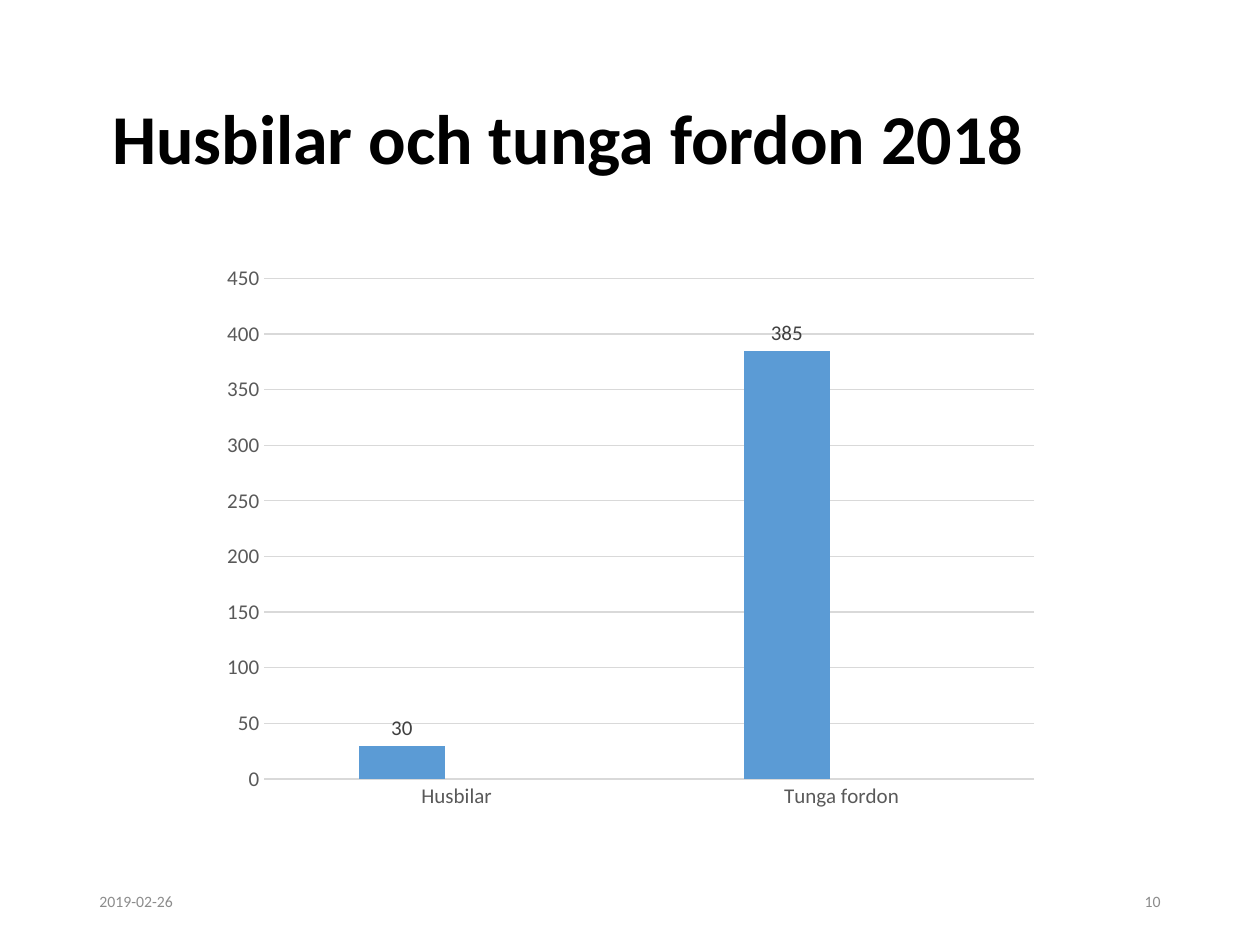
import pptx
import pptx.chart.data
import pptx.dml.color
import pptx.enum.chart
import pptx.enum.text
import pptx.util

Inches, Pt = pptx.util.Inches, pptx.util.Pt
RGBColor = pptx.dml.color.RGBColor
Align = pptx.enum.text.PP_ALIGN
TickMark = pptx.enum.chart.XL_TICK_MARK

BLACK = RGBColor(0x00, 0x00, 0x00)
FOOTER_GRAY = RGBColor(0x8C, 0x8C, 0x8C)
AXIS_GRAY = RGBColor(0x59, 0x59, 0x59)
LABEL_GRAY = RGBColor(0x40, 0x40, 0x40)
GRID_GRAY = RGBColor(0xD9, 0xD9, 0xD9)
BLUE = RGBColor(0x5B, 0x9B, 0xD5)
ORANGE = RGBColor(0xED, 0x7D, 0x31)

TITLE = "Husbilar och tunga fordon 2018"
DATE = "2019-02-26"
PAGE_NUMBER = "10"
CATEGORIES = ["Husbilar", "Tunga fordon"]
SERIES = [("Series 1", [30, 385], BLUE), ("Series 2", [None, None], ORANGE)]

SLIDE_WIDTH, MARGIN = 10, 0.69
FOOTER_TOP, FOOTER_WIDTH, FOOTER_HEIGHT = 6.95, 2.25, 0.4


def style_font(font, size, color, bold=False):
    font.name = "Calibri"
    font.size = Pt(size)
    font.bold = bold
    font.color.rgb = color


def style_line(line):
    line.color.rgb = GRID_GRAY
    line.width = Pt(0.75)


def add_text(page, text, place, size, color, bold=False, align=Align.LEFT):
    box = page.shapes.add_textbox(*map(Inches, place))
    frame = box.text_frame
    frame.word_wrap = True
    frame.vertical_anchor = pptx.enum.text.MSO_ANCHOR.MIDDLE
    paragraph = frame.paragraphs[0]
    paragraph.text = text
    paragraph.alignment = align
    style_font(paragraph.font, size, color, bold)
    return frame


def add_vehicle_chart(page):
    data = pptx.chart.data.CategoryChartData()
    data.categories = CATEGORIES
    for name, values, _ in SERIES:
        data.add_series(name, values)
    place = map(Inches, (1.67, 2.02, 6.67, 4.49))
    chart = page.shapes.add_chart(
        pptx.enum.chart.XL_CHART_TYPE.COLUMN_CLUSTERED, *place, data).chart
    chart.has_title = False
    chart.has_legend = False
    style_font(chart.font, 10, BLACK)

    for axis in (chart.category_axis, chart.value_axis):
        axis.major_tick_mark = axis.minor_tick_mark = TickMark.NONE
        style_font(axis.tick_labels.font, 12, AXIS_GRAY)
    style_line(chart.category_axis.format.line)
    chart.value_axis.format.line.fill.background()
    style_line(chart.value_axis.major_gridlines.format.line)

    plot = chart.plots[0]
    plot.vary_by_categories = False
    plot.gap_width = 219
    plot.overlap = -27
    for series, (_, _, color) in zip(plot.series, SERIES):
        series.format.fill.solid()
        series.format.fill.fore_color.rgb = color
    labels = plot.series[0].data_labels
    labels.show_value = True
    labels.position = pptx.enum.chart.XL_LABEL_POSITION.OUTSIDE_END
    style_font(labels.font, 12, LABEL_GRAY)


def main():
    deck = pptx.Presentation()
    deck.slide_width, deck.slide_height = Inches(SLIDE_WIDTH), Inches(7.5)
    page = deck.slides.add_slide(deck.slide_layouts[6])

    title = add_text(page, TITLE, (MARGIN, 0.4, SLIDE_WIDTH - 2 * MARGIN, 1.45),
                     40, BLACK, bold=True)
    title.margin_left = Inches(0.2)
    title.paragraphs[0].line_spacing = 0.9

    add_vehicle_chart(page)

    number_left = SLIDE_WIDTH - MARGIN - FOOTER_WIDTH
    for text, left, align in ((DATE, MARGIN, Align.LEFT),
                              (PAGE_NUMBER, number_left, Align.RIGHT)):
        add_text(page, text, (left, FOOTER_TOP, FOOTER_WIDTH, FOOTER_HEIGHT),
                 9, FOOTER_GRAY, align=align)

    deck.save("out.pptx")


if __name__ == "__main__":
    main()
